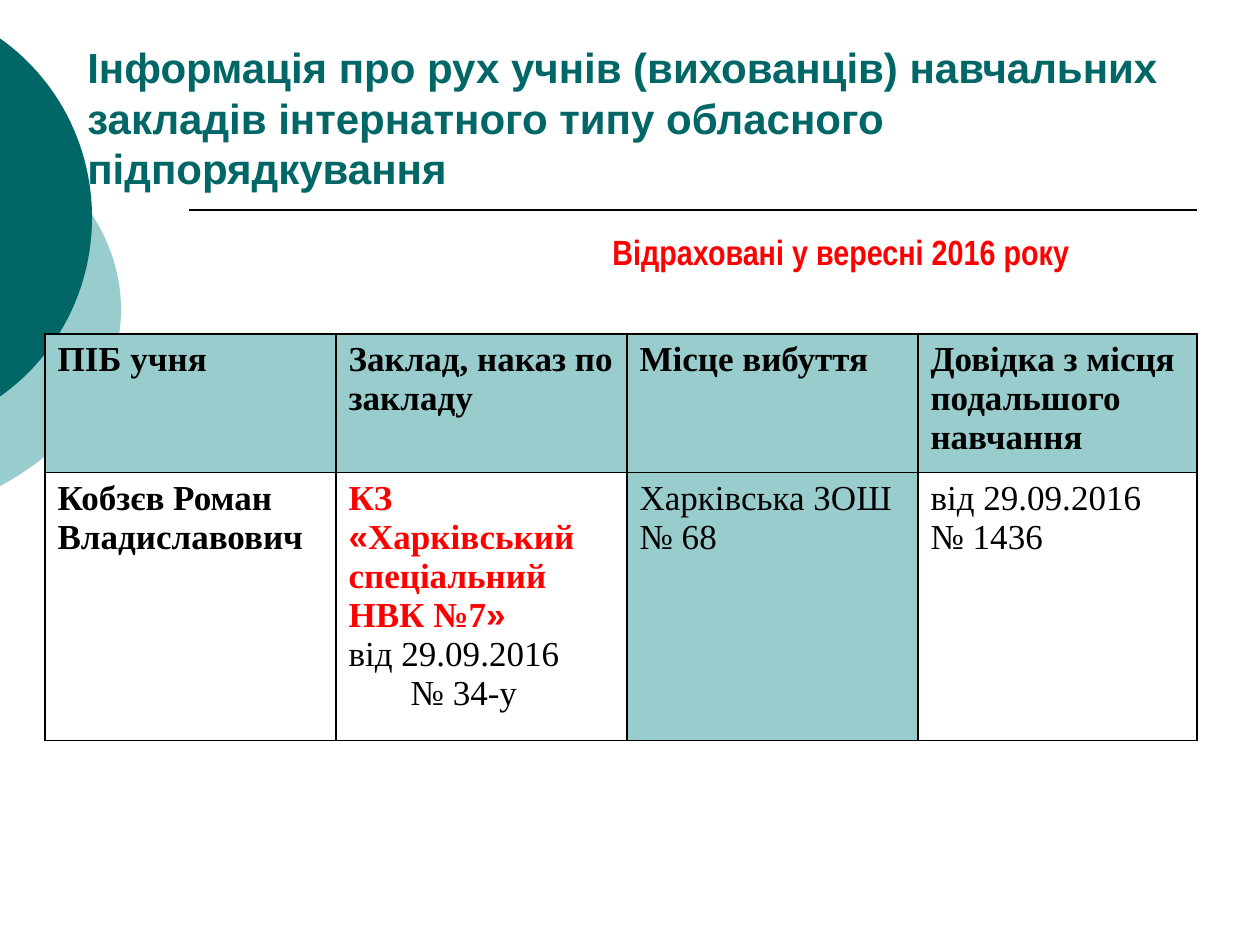
from dataclasses import dataclass

from lxml.etree import SubElement
from pptx import Presentation
from pptx.dml.color import RGBColor
from pptx.enum.shapes import MSO_CONNECTOR as Connector, MSO_SHAPE as Preset
from pptx.enum.text import MSO_ANCHOR as Anchor
from pptx.oxml.ns import qn
from pptx.util import Emu, Pt

EMU_PER_PX = 914400 / 126
TEAL = RGBColor(0x00, 0x66, 0x66)
PALE_TEAL = RGBColor(0x99, 0xCC, 0xCC)
RED = RGBColor(0xFF, 0x00, 0x00)
BLACK = RGBColor(0x00, 0x00, 0x00)
SERIF = "Times New Roman"


@dataclass(frozen=True)
class TextRun:
    text: str
    bold: bool = False
    color: RGBColor = BLACK
    font: str = SERIF
    size: int = 20


@dataclass(frozen=True)
class Line:
    """One paragraph of runs, indented by a number of px."""
    runs: tuple[TextRun, ...]
    indent: int = 0


@dataclass(frozen=True)
class CellContent:
    lines: tuple[Line, ...]
    shaded: bool = False


@dataclass(frozen=True)
class EdgeDisc:
    """Disc that overhangs the left slide edge."""
    left: int
    top: int
    width: int
    height: int
    color: RGBColor


def px(value: int) -> Emu:
    return Emu(round(value * EMU_PER_PX))


def single(text: str, **style) -> Line:
    return Line((TextRun(text, **style),))


DISCS = (
    EdgeDisc(-446, 94, 567, 431, PALE_TEAL),
    EdgeDisc(-334, 0, 426, 435, TEAL),
)
TITLE = single(
    "Інформація про рух учнів (вихованців) навчальних закладів "
    "інтернатного типу обласного підпорядкування",
    bold=True, color=TEAL, font="Arial", size=24)
SUBTITLE = single("Відраховані у вересні 2016 року",
                  bold=True, color=RED, font="Arial Narrow")

COLUMN_WIDTHS = (291, 291, 291, 279)
ROW_HEIGHTS = (130, 268)
HEADERS = ("ПІБ учня", "Заклад, наказ по закладу", "Місце вибуття",
           "Довідка з місця подальшого навчання")
SCHOOL = Line((
    TextRun("КЗ ", True, RED),
    TextRun("«", True, RED, "Arial"),
    TextRun("Харківський спеціальний НВК №7", True, RED),
    TextRun("»", True, RED, "Arial"),
))
ROWS = (
    tuple(CellContent((single(header, bold=True),), True) for header in HEADERS),
    (
        CellContent((single("Кобзєв Роман Владиславович", bold=True),)),
        CellContent((SCHOOL, single("від 29.09.2016"),
                     Line((TextRun("№ 34-у"),), indent=62))),
        CellContent((single("Харківська ЗОШ № 68"),), True),
        CellContent((single("від 29.09.2016"), single("№ 1436"))),
    ),
)


def write_lines(frame, lines: tuple[Line, ...]) -> None:
    frame.word_wrap = True
    for index, line in enumerate(lines):
        paragraph = frame.add_paragraph() if index else frame.paragraphs[0]
        if line.indent:
            paragraph._p.get_or_add_pPr().set("marL", str(px(line.indent)))
        for text_run in line.runs:
            run = paragraph.add_run()
            run.text = text_run.text
            run.font.name = text_run.font
            run.font.size = Pt(text_run.size)
            run.font.bold = text_run.bold
            run.font.color.rgb = text_run.color


def add_text(slide, left: int, top: int, width: int, height: int,
             line: Line, anchor: Anchor) -> None:
    box = slide.shapes.add_textbox(px(left), px(top), px(width), px(height))
    box.text_frame.vertical_anchor = anchor
    write_lines(box.text_frame, (line,))


def add_disc(slide, disc: EdgeDisc) -> None:
    shape = slide.shapes.add_shape(
        Preset.OVAL, px(disc.left), px(disc.top), px(disc.width), px(disc.height))
    shape.shadow.inherit = False
    shape.fill.solid()
    shape.fill.fore_color.rgb = disc.color
    shape.line.fill.background()


def add_rule(slide, left: int, right: int, y: int) -> None:
    rule = slide.shapes.add_connector(
        Connector.STRAIGHT, px(left), px(y), px(right), px(y))
    rule.line.color.rgb = BLACK
    rule.line.width = Pt(1)
    SubElement(rule._element.spPr, qn("a:effectLst"))


def add_borders(cell) -> None:
    """Draw all four borders; they must come before the cell's fill."""
    properties = cell._tc.get_or_add_tcPr()
    for side in ("lnL", "lnR", "lnT", "lnB"):
        border = SubElement(properties, qn(f"a:{side}"), w=str(Pt(1)))
        fill = SubElement(border, qn("a:solidFill"))
        SubElement(fill, qn("a:srgbClr"), val=str(BLACK))


def add_pupil_table(slide, left: int, top: int) -> None:
    table = slide.shapes.add_table(
        len(ROWS), len(COLUMN_WIDTHS), px(left), px(top),
        px(sum(COLUMN_WIDTHS)), px(sum(ROW_HEIGHTS))).table
    table.first_row = table.horz_banding = False
    for column, width in zip(table.columns, COLUMN_WIDTHS):
        column.width = px(width)
    for row, height, contents in zip(table.rows, ROW_HEIGHTS, ROWS):
        row.height = px(height)
        for cell, content in zip(row.cells, contents):
            add_borders(cell)
            if content.shaded:
                cell.fill.solid()
                cell.fill.fore_color.rgb = PALE_TEAL
            else:
                cell.fill.background()
            write_lines(cell.text_frame, content.lines)


def main() -> None:
    presentation = Presentation()
    presentation.slide_width, presentation.slide_height = px(1260), px(945)
    slide = presentation.slides.add_slide(presentation.slide_layouts[6])
    for disc in DISCS:
        add_disc(slide, disc)
    add_rule(slide, 189, 1197, 210)
    add_text(slide, 75, 42, 1122, 157, TITLE, Anchor.BOTTOM)
    add_pupil_table(slide, 45, 334)
    add_text(slide, 600, 224, 596, 54, SUBTITLE, Anchor.TOP)
    presentation.save("out.pptx")


if __name__ == "__main__":
    main()
